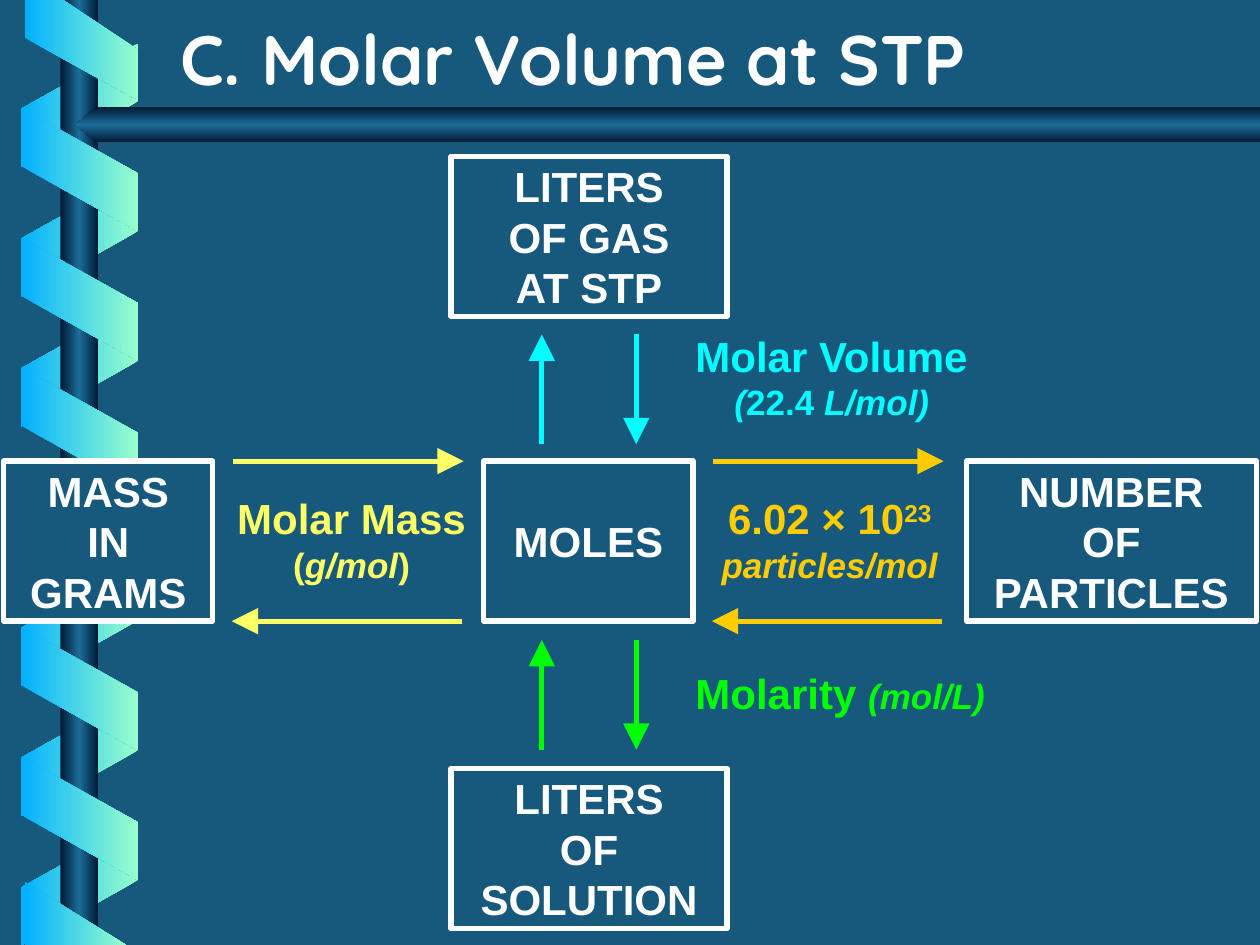
from typing import NamedTuple

from lxml.etree import SubElement
from pptx import Presentation
from pptx.dml.color import RGBColor
from pptx.enum.shapes import MSO_CONNECTOR, MSO_SHAPE
from pptx.enum.text import MSO_ANCHOR, MSO_AUTO_SIZE, PP_ALIGN
from pptx.oxml.ns import qn
from pptx.util import Inches, Pt

# Grid: 100 columns by 75 rows of square cells
CELL = Inches(0.1)
COLS, ROWS = 100, 75

NAVY = RGBColor(0x17, 0x59, 0x7D)
DARK = RGBColor(0x00, 0x19, 0x32)
STEEL = RGBColor(0x1C, 0x6D, 0x9A)
MINT = RGBColor(0x99, 0xFF, 0xCC)
BLUE = RGBColor(0x01, 0xB0, 0xFF)
WHITE = RGBColor(0xFF, 0xFF, 0xFF)
YELLOW = RGBColor(0xFF, 0xFF, 0x66)
ORANGE = RGBColor(0xFF, 0xCC, 0x00)
CYAN = RGBColor(0x00, 0xFF, 0xFF)
GREEN = RGBColor(0x00, 0xFF, 0x00)
BAR = (DARK, STEEL, DARK)


class Area(NamedTuple):
    col: float
    row: float
    wide: float
    high: float


class Box(NamedTuple):
    area: Area
    lines: tuple[str, ...]
    solid: bool = False


class Run(NamedTuple):
    text: str
    size: int = 24
    slant: bool = False
    power: bool = False


class Label(NamedTuple):
    area: Area
    color: RGBColor
    lines: tuple[tuple[Run, ...], ...]
    align: PP_ALIGN = PP_ALIGN.CENTER
    indent: float = 0  # cells, for the second line


class Arrow(NamedTuple):
    start: tuple[float, float]
    end: tuple[float, float]
    color: RGBColor


def cells(*counts: float) -> list[int]:
    return [round(n * CELL) for n in counts]


def shade(shape, colors: tuple[RGBColor, ...], angle: int = 0) -> None:
    """Fill with evenly spaced colours, fixed to the slide's axes."""
    shape.shadow.inherit = False
    shape.line.fill.background()
    shape.fill.gradient()
    shape.fill.gradient_angle = angle
    grad = shape._element.spPr.find(qn("a:gradFill"))
    grad.set("rotWithShape", "0")
    stops = grad.find(qn("a:gsLst"))
    for old in list(stops):
        stops.remove(old)
    for i, color in enumerate(colors):
        stop = SubElement(stops, qn("a:gs"), pos=str(100000 * i // (len(colors) - 1)))
        SubElement(stop, qn("a:srgbClr"), val=str(color))


def flip(shape) -> None:
    shape._element.spPr.find(qn("a:xfrm")).set("flipH", "1")


def draw_band(slide, row: float, front: bool) -> None:
    band = slide.shapes.add_shape(MSO_SHAPE.PARALLELOGRAM, *cells(1.4, row, 9.8, 9.3))
    band.adjustments[0] = 0.56
    band.rotation = 270 if front else 90
    if not front:
        flip(band)
    shade(band, (BLUE, MINT) if front else (MINT, BLUE))


def draw_end(slide, points: list[tuple[float, float]]) -> None:
    path = slide.shapes.build_freeform(*points[0], scale=CELL)
    path.add_line_segments(points[1:], close=True)
    shade(path.convert_to_shape(), (BLUE, MINT))


def pad(frame) -> None:
    frame.word_wrap = True
    frame.margin_left = frame.margin_right = Inches(0.01)
    frame.margin_top = frame.margin_bottom = Inches(0.01)


def draw_box(slide, box: Box) -> None:
    shape = slide.shapes.add_shape(MSO_SHAPE.RECTANGLE, *cells(*box.area))
    shape.shadow.inherit = False
    if box.solid:
        shape.fill.solid()
        shape.fill.fore_color.rgb = NAVY
    else:
        shape.fill.background()
    shape.line.color.rgb = WHITE
    shape.line.width = Pt(3)
    frame = shape.text_frame
    pad(frame)
    frame.vertical_anchor = MSO_ANCHOR.MIDDLE
    for i, line in enumerate(box.lines):
        para = frame.add_paragraph() if i else frame.paragraphs[0]
        para.text = line
        para.alignment = PP_ALIGN.CENTER
        style(para.font, 24, WHITE)


def style(font, size: int, color: RGBColor, name: str = "Arial") -> None:
    font.name, font.size, font.bold = name, Pt(size), True
    font.color.rgb = color


def draw_label(slide, label: Label) -> None:
    frame = slide.shapes.add_textbox(*cells(*label.area)).text_frame
    pad(frame)
    for i, line in enumerate(label.lines):
        para = frame.add_paragraph() if i else frame.paragraphs[0]
        para.alignment = label.align
        if i and label.indent:
            para._p.get_or_add_pPr().set("marL", str(cells(label.indent)[0]))
        for part in line:
            run = para.add_run()
            run.text = part.text
            style(run.font, part.size, label.color)
            run.font.italic = part.slant
            if part.power:
                run._r.get_or_add_rPr().set("baseline", "30000")


def draw_arrow(slide, arrow: Arrow) -> None:
    link = slide.shapes.add_connector(
        MSO_CONNECTOR.STRAIGHT, *cells(*arrow.start, *arrow.end))
    link.line.color.rgb = arrow.color
    link.line.width = Pt(3)
    SubElement(link.line._get_or_add_ln(), qn("a:tailEnd"),
               type="triangle", w="lg", len="lg")
    SubElement(link._element.spPr, qn("a:effectLst"))


def draw_title(slide, text: str) -> None:
    title = slide.shapes.title
    title.left, title.top, title.width, title.height = cells(13.3, 0, 85, 8.4)
    frame = title.text_frame
    frame.text = text
    frame.auto_size = MSO_AUTO_SIZE.NONE
    frame.vertical_anchor = MSO_ANCHOR.BOTTOM
    para = frame.paragraphs[0]
    para.alignment = PP_ALIGN.LEFT
    run = para.runs[0]
    style(run.font, 40, WHITE, "Quicksand")
    # Text shadow: goes right after the fill
    effect = SubElement(run._r.rPr, qn("a:effectLst"))
    run._r.rPr.find(qn("a:solidFill")).addnext(effect)
    cast = SubElement(effect, qn("a:outerShdw"), dist="38100", dir="2700000")
    SubElement(cast, qn("a:srgbClr"), val=str(DARK))


SIDE, HIGH = 36.6, 12.7  # top of the middle row, height of a box
LOW = SIDE + HIGH
BOXES = [
    Box(Area(0.3, SIDE, 16.6, HIGH), ("MASS", "IN", "GRAMS"), True),
    Box(Area(38.4, SIDE, 16.6, HIGH), ("MOLES",)),
    Box(Area(76.7, SIDE, 23, HIGH), ("NUMBER", "OF", "PARTICLES")),
    Box(Area(35.8, 12.4, 21.9, HIGH), ("LITERS", "OF GAS", "AT STP")),
    Box(Area(35.8, 61, 21.9, HIGH), ("LITERS", "OF", "SOLUTION")),
]
LABELS = [
    Label(Area(16.9, 39, 22, 8.9), YELLOW, (
        (Run("Molar Mass"),), (Run("(", 20), Run("g/mol", 20, True), Run(")", 20)))),
    Label(Area(50.4, 39, 30.9, 7), ORANGE, (
        (Run("6.02 × 10"), Run("23", power=True)), (Run("particles/mol", 20, True),))),
    Label(Area(55.1, 26.1, 33.6, 5.5), CYAN, (
        (Run("Molar Volume"),),
        (Run("(", 20, True), Run("22.4", 20), Run(" L/mol)", 20, True))),
        PP_ALIGN.LEFT, 3.1),
    Label(Area(55.1, 52.9, 34.6, 5.5), GREEN, (
        (Run("Molarity "), Run("(mol/L)", 20, True)),), PP_ALIGN.LEFT),
]
# A pair of opposite arrows for each conversion
ARROWS = [
    arrow for col, color in ((18.5, YELLOW), (56.6, ORANGE)) for arrow in (
        Arrow((col, SIDE), (col + 18.3, SIDE), color),
        Arrow((col + 18.2, LOW), (col - 0.1, LOW), color))
] + [
    arrow for row, color in ((26.55, CYAN), (50.8, GREEN)) for arrow in (
        Arrow((43, row + 8.7), (43, row), color),
        Arrow((50.5, row), (50.5, row + 8.7), color))
]


def main() -> None:
    deck = Presentation()
    deck.slide_width, deck.slide_height = cells(COLS, ROWS)
    slide = deck.slides.add_slide(deck.slide_layouts[5])
    slide.background.fill.solid()
    slide.background.fill.fore_color.rgb = NAVY

    # Ribbon wound around the pole
    for turn in range(7):
        draw_band(slide, 3.7 + 10.3 * turn, front=False)
    pole = slide.shapes.add_shape(MSO_SHAPE.RECTANGLE, *cells(4.8, 0, 3, ROWS))
    shade(pole, BAR)
    for turn in range(6):
        draw_band(slide, 8.8 + 10.3 * turn, front=True)
    draw_end(slide, [(1.7, 0), (1.7, 2.9), (10.9, 8.1), (10.9, 3.5), (4.7, 0)])
    draw_end(slide, [(9.6, 74.9), (1.7, 70.5), (1.6, 75)])

    # Bar under the title
    bar = slide.shapes.add_shape(MSO_SHAPE.PENTAGON, *cells(6, 8.5, 94, 2.8))
    bar.adjustments[0] = 0.59
    flip(bar)
    shade(bar, BAR, 90)
    draw_title(slide, "C. Molar Volume at STP")

    # Conversion map
    for label in LABELS:
        draw_label(slide, label)
    for box in BOXES:
        draw_box(slide, box)
    for arrow in ARROWS:
        draw_arrow(slide, arrow)
    deck.save("out.pptx")


if __name__ == "__main__":
    main()
